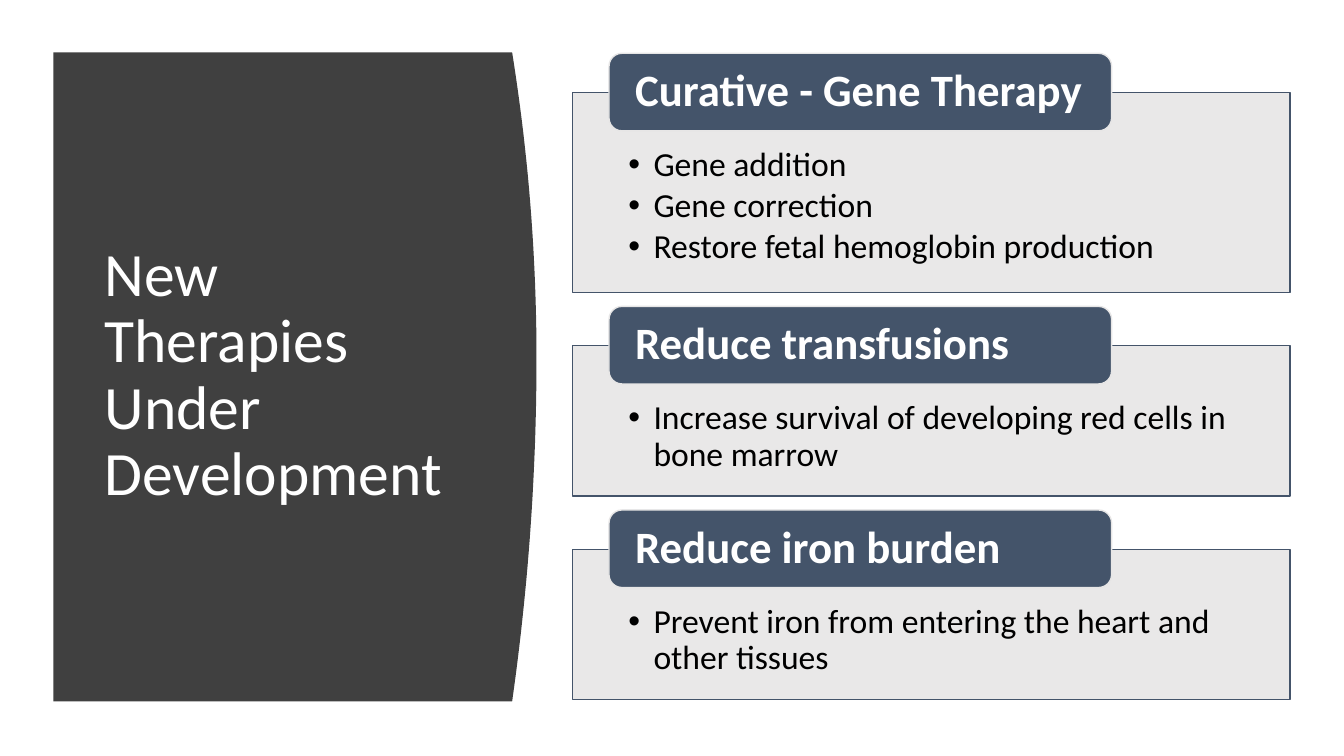
from dataclasses import dataclass
from typing import Any

from lxml.etree import SubElement
from pptx import Presentation
from pptx.dml.color import RGBColor as Color
from pptx.enum.shapes import MSO_SHAPE as Preset
from pptx.enum.text import MSO_ANCHOR as Anchor, PP_ALIGN as Align
from pptx.oxml.ns import qn
from pptx.util import Pt


@dataclass(frozen=True)
class Theme:
    font: str = "Calibri"
    dark: str = "404040"
    navy: str = "44546A"
    pale: str = "E7E6E6"
    white: str = "FFFFFF"
    black: str = "000000"
    title_size: float = 44
    heading_size: float = 32
    body_size: float = 24


@dataclass(frozen=True)
class Rect:
    left: float
    top: float
    width: float
    height: float

    def lengths(self) -> list[int]:
        return [Pt(value) for value in (self.left, self.top, self.width, self.height)]


@dataclass(frozen=True)
class TextStyle:
    size: float
    color: str
    bold: bool = False
    anchor: Any = Anchor.MIDDLE
    insets: tuple[float, float, float, float] = (7.2, 3.6, 7.2, 3.6)
    space_after: float = 0
    bullet_indent: float = 0


@dataclass(frozen=True)
class Section:
    heading: str
    points: list[str]
    height: float


THEME = Theme()
TITLE = TextStyle(THEME.title_size, THEME.white)
HEADING = TextStyle(THEME.heading_size, THEME.white, bold=True, insets=(16, 0, 16, 0))
BODY = TextStyle(THEME.body_size, THEME.black, anchor=Anchor.TOP,
                 insets=(39.8, 39.4, 39.8, 13.4), space_after=3.3, bullet_indent=18)

SECTIONS = [
    Section("Curative - Gene Therapy",
            ["Gene addition", "Gene correction", "Restore fetal hemoglobin production"], 142.6),
    Section("Reduce transfusions",
            ["Increase survival of developing red cells in bone marrow"], 107.2),
    Section("Reduce iron burden",
            ["Prevent iron from entering the heart and other tissues"], 107.2),
]
PANEL_LEFT, PANEL_TOP, PANEL_WIDTH, PANEL_GAP = 409, 66.2, 512.6, 38.2
TAB_LEFT, TAB_WIDTH, TAB_HEIGHT, TAB_RISE = 435, 359, 55.4, 28.1


def apply(target: Any, values: dict[str, Any]) -> None:
    for name, value in values.items():
        setattr(target, name, value)


def paint(shape: Any, fill: str, line: str | None = None) -> None:
    shape.shadow.inherit = False
    shape.fill.solid()
    shape.fill.fore_color.rgb = Color.from_string(fill)
    if line is None:
        shape.line.fill.background()
    else:
        shape.line.color.rgb = Color.from_string(line)
        shape.line.width = Pt(1)


def set_opacity(shape: Any, percent: int) -> None:
    color = shape.fill._xPr.find(qn("a:solidFill"))[0]
    SubElement(color, qn("a:alpha"), val=str(percent * 1000))


def add_bullet(para: Any, indent: float) -> None:
    properties = para._p.get_or_add_pPr()
    properties.set("marL", str(Pt(indent)))
    properties.set("indent", str(-Pt(indent)))
    SubElement(properties, qn("a:buFont"), typeface="Arial")
    SubElement(properties, qn("a:buChar"), char="•")


def write(shape: Any, lines: list[str], style: TextStyle) -> None:
    frame = shape.text_frame
    sides = ("margin_left", "margin_top", "margin_right", "margin_bottom")
    apply(frame, {"word_wrap": True, "vertical_anchor": style.anchor}
          | {side: Pt(inset) for side, inset in zip(sides, style.insets)})
    for index, line in enumerate(lines):
        para = frame.add_paragraph() if index else frame.paragraphs[0]
        apply(para, {"alignment": Align.LEFT, "line_spacing": 0.9,
                     "space_after": Pt(style.space_after)})
        if style.bullet_indent:
            add_bullet(para, style.bullet_indent)
        span = para.add_run()
        span.text = line
        apply(span.font, {"name": THEME.font, "size": Pt(style.size), "bold": style.bold})
        span.font.color.rgb = Color.from_string(style.color)


def draw_title_panel(page: Any) -> None:
    left, top, edge, bottom = 38.2, 37.4, 365.8, 501.1
    bulge, peak, steps = 17.4, 255.6, 48
    outline = [(left, top)]
    for step in range(steps + 1):
        height = top + (bottom - top) * step / steps
        reach = (height - peak) / ((top if height < peak else bottom) - peak)
        outline.append((edge + bulge * (1 - reach ** 2), height))
    outline.append((left, bottom))
    corners = [(Pt(across), Pt(down)) for across, down in outline]
    builder = page.shapes.build_freeform(*corners[0])
    builder.add_line_segments(corners[1:], close=True)
    paint(builder.convert_to_shape(), THEME.dark)
    box = page.shapes.add_textbox(*Rect(67.7, 79.9, 269.3, 377.3).lengths())
    write(box, ["New Therapies Under Development"], TITLE)


def draw_section(page: Any, section: Section, top: float) -> None:
    area = Rect(PANEL_LEFT, top, PANEL_WIDTH, section.height)
    panel = page.shapes.add_shape(Preset.RECTANGLE, *area.lengths())
    paint(panel, THEME.pale, THEME.navy)
    set_opacity(panel, 90)
    write(panel, section.points, BODY)
    area = Rect(TAB_LEFT, top - TAB_RISE, TAB_WIDTH, TAB_HEIGHT)
    tab = page.shapes.add_shape(Preset.ROUNDED_RECTANGLE, *area.lengths())
    paint(tab, THEME.navy, THEME.pale)
    write(tab, [section.heading], HEADING)


def main() -> None:
    deck = Presentation()
    apply(deck, {"slide_width": Pt(960), "slide_height": Pt(540)})
    page = deck.slides.add_slide(deck.slide_layouts[6])
    draw_title_panel(page)
    top = PANEL_TOP
    for section in SECTIONS:
        draw_section(page, section, top)
        top += section.height + PANEL_GAP
    deck.save("out.pptx")


if __name__ == "__main__":
    main()
